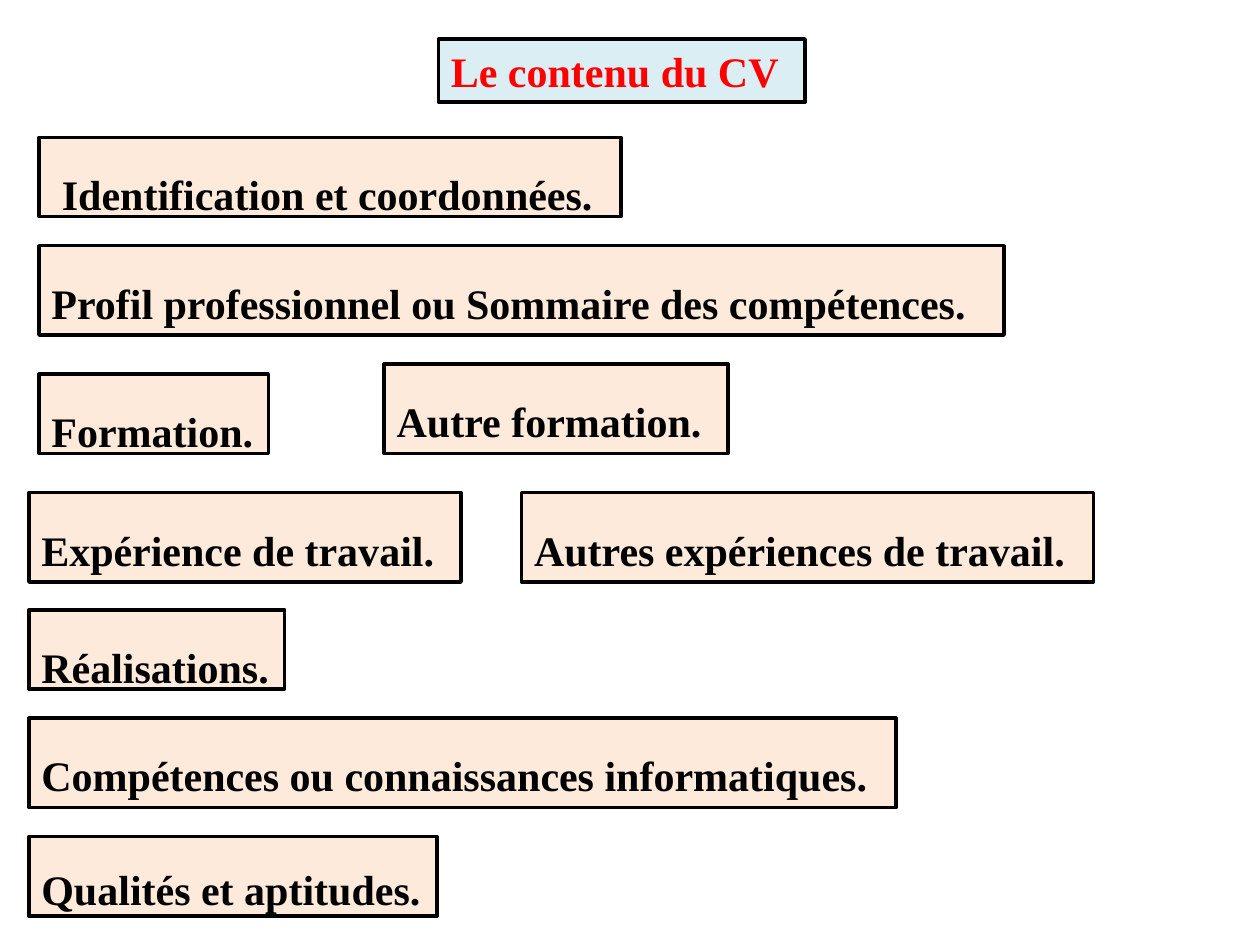
import pptx
import pptx.util
import pptx.dml.color
import pptx.enum.shapes
import pptx.enum.text

Inches = pptx.util.Inches
Pt = pptx.util.Pt
ALIGN = pptx.enum.text.PP_ALIGN
ANCHOR = pptx.enum.text.MSO_ANCHOR


def color(hex_value):
    return pptx.dml.color.RGBColor.from_string(hex_value)


def add_box(slide, text, left, top, width, height, fill, ink, wrap, anchor):
    box = slide.shapes.add_shape(
        pptx.enum.shapes.MSO_SHAPE.RECTANGLE,
        Inches(left), Inches(top), Inches(width), Inches(height))
    box.shadow.inherit = False
    box.fill.solid()
    box.fill.fore_color.rgb = color(fill)
    box.line.color.rgb = color("000000")
    box.line.width = Pt(2)
    frame = box.text_frame
    frame.text = text
    frame.word_wrap = wrap
    frame.auto_size = pptx.enum.text.MSO_AUTO_SIZE.SHAPE_TO_FIT_TEXT
    frame.vertical_anchor = anchor
    paragraph = frame.paragraphs[0]
    paragraph.alignment = ALIGN.LEFT
    font = paragraph.runs[0].font
    font.name = "Times New Roman"
    font.size = Pt(24)
    font.bold = True
    font.color.rgb = color(ink)
    return paragraph


presentation = pptx.Presentation()
presentation.slide_width = Inches(10)
presentation.slide_height = Inches(7.5)
slide = presentation.slides.add_slide(presentation.slide_layouts[6])

# Title
add_box(slide, "Le contenu du CV ", 3.48, 0.31, 2.91, 0.5,
        "DBEEF4", "FF0000", False, ANCHOR.MIDDLE)

# CV sections: text, left, top, width, height, wrap, anchor
sections = [
    (" Identification et coordonnées. ", 0.31, 1.09, 4.62, 0.63, False, ANCHOR.TOP),
    ("Profil professionnel ou Sommaire des compétences.", 0.31, 1.95, 7.66, 0.71, True, ANCHOR.TOP),
    ("Formation.", 0.31, 2.97, 1.82, 0.63, False, ANCHOR.TOP),
    ("Autre formation. ", 3.05, 2.89, 2.73, 0.71, False, ANCHOR.TOP),
    ("Expérience de travail. ", 0.23, 3.91, 3.43, 0.71, False, ANCHOR.TOP),
    ("Autres expériences de travail. ", 4.14, 3.91, 4.54, 0.71, True, ANCHOR.TOP),
    ("Réalisations.", 0.23, 4.84, 2.03, 0.63, False, ANCHOR.TOP),
    ("Compétences ou connaissances informatiques.", 0.23, 5.7, 6.88, 0.71, True, ANCHOR.TOP),
    ("Qualités et aptitudes.", 0.23, 6.64, 3.24, 0.63, False, ANCHOR.MIDDLE),
]
for text, left, top, width, height, wrap, anchor in sections:
    section = add_box(slide, text, left, top, width, height,
                      "FDEADA", "000000", wrap, anchor)
    section.alignment = ALIGN.JUSTIFY
    section.line_spacing = 1.5

presentation.save("out.pptx")
